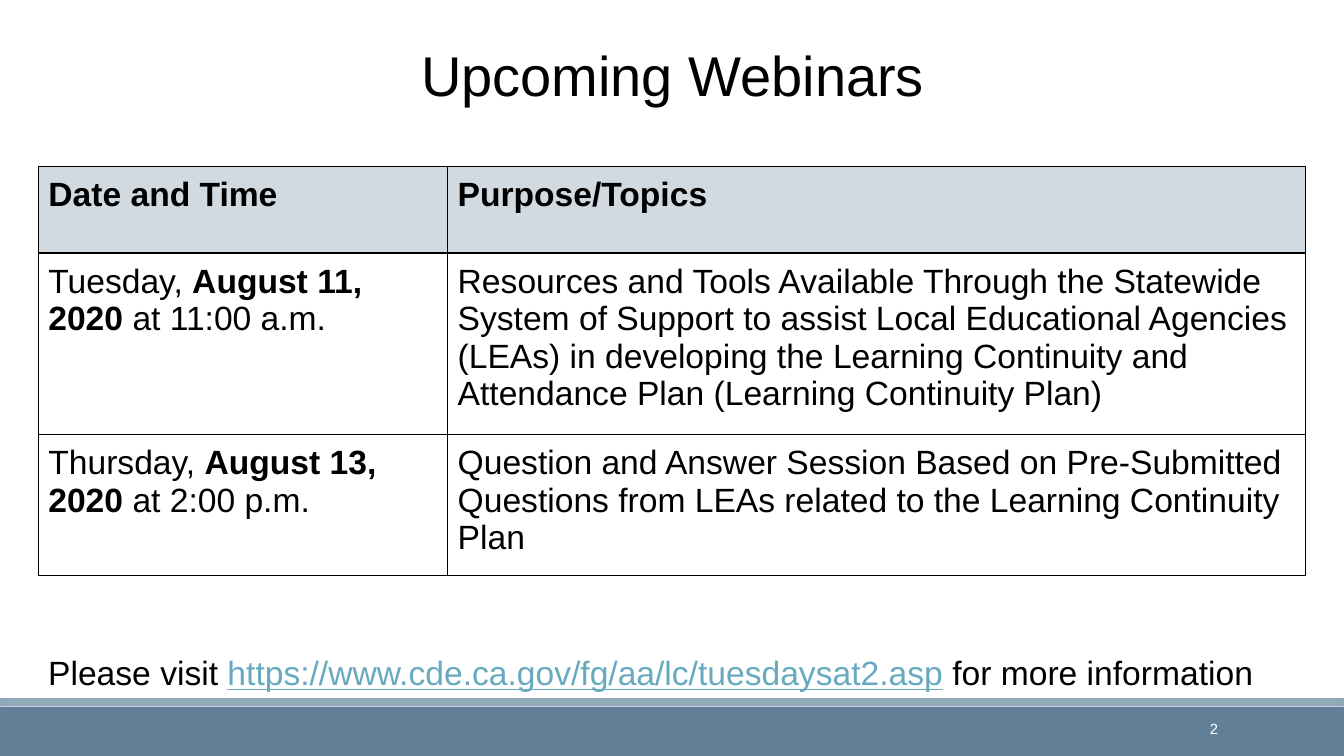
from dataclasses import dataclass

from lxml.etree import SubElement
from pptx import Presentation
from pptx.dml.color import RGBColor
from pptx.enum.shapes import MSO_SHAPE as Shape
from pptx.enum.text import MSO_ANCHOR as Anchor, PP_ALIGN as Align
from pptx.oxml.ns import qn
from pptx.util import Inches, Pt


@dataclass(frozen=True)
class Theme:
    """Colours, font and type sizes."""
    font: str = "Arial"
    ink: str = "000000"
    paper: str = "FFFFFF"
    header: str = "D1D9E1"
    link: str = "67AABF"
    band: str = "618097"
    stripe: str = "92A9B9"
    stripe_line: str = "8FA2B6"
    title_size: float = 40
    body_size: float = 24
    number_size: float = 10.5


class SlideBuilder:
    """Draws styled elements on one slide."""

    def __init__(self, slide, theme):
        """Keep the slide and its theme."""
        self.slide = slide
        self.theme = theme

    def fill_text(self, frame, runs, size=None, color=None, align=Align.LEFT,
                  anchor=Anchor.TOP, spacing=None):
        """Fill a text frame with (text, overrides) runs."""
        frame.word_wrap = True
        frame.vertical_anchor = anchor
        paragraph = frame.paragraphs[0]
        paragraph.alignment = align
        if spacing:
            paragraph.line_spacing = spacing
        for text, overrides in runs:
            run = paragraph.add_run()
            run.text = text
            values = {"name": self.theme.font, "bold": False,
                      "size": Pt(size or self.theme.body_size)} | overrides
            run_color = values.pop("color", color or self.theme.ink)
            for name, value in values.items():
                setattr(run.font, name, value)
            run.font.color.rgb = RGBColor.from_string(run_color)

    def bar(self, top, height, fill, line=None):
        """Draw a full-width rectangle."""
        shape = self.slide.shapes.add_shape(
            Shape.RECTANGLE, 0, Inches(top), Inches(13.33), Inches(height))
        shape.shadow.inherit = False
        shape.fill.solid()
        shape.fill.fore_color.rgb = RGBColor.from_string(fill)
        if line:
            shape.line.color.rgb = RGBColor.from_string(line)
            shape.line.width = Pt(1.25)
        else:
            shape.line.fill.background()

    def text(self, box, runs, inset=0.05, **style):
        """Add a text box with the given vertical inset."""
        frame = self.slide.shapes.add_textbox(*map(Inches, box)).text_frame
        frame.margin_top = frame.margin_bottom = Inches(inset)
        self.fill_text(frame, runs, **style)

    def border(self, cell):
        """Outline a cell with thin lines, ahead of its fill."""
        properties = cell._tc.get_or_add_tcPr()
        for side in ("lnL", "lnR", "lnT", "lnB"):
            line = SubElement(properties, qn(f"a:{side}"), w=str(Pt(1)))
            fill = SubElement(line, qn("a:solidFill"))
            SubElement(fill, qn("a:srgbClr"), val=self.theme.ink)

    def table(self, left, top, widths, heights, rows):
        """Add a bordered table with a shaded first row."""
        table = self.slide.shapes.add_table(
            len(rows), len(widths), Inches(left), Inches(top),
            Inches(sum(widths)), Inches(sum(heights))).table
        table.horz_banding = False
        for column, width in zip(table.columns, widths):
            column.width = Inches(width)
        for index, (row, height) in enumerate(zip(rows, heights)):
            table.rows[index].height = Inches(height)
            for cell, runs in zip(table.rows[index].cells, row):
                for side in ("left", "right", "top", "bottom"):
                    setattr(cell, f"margin_{side}", Inches(0.1))
                self.border(cell)
                if index == 0:
                    cell.fill.solid()
                    cell.fill.fore_color.rgb = RGBColor.from_string(self.theme.header)
                else:
                    cell.fill.background()
                self.fill_text(cell.text_frame, runs)


def main():
    """Build the webinar slide."""
    presentation = Presentation()
    presentation.slide_width = Inches(13.33)
    presentation.slide_height = Inches(7.5)
    theme = Theme()
    builder = SlideBuilder(
        presentation.slides.add_slide(presentation.slide_layouts[6]), theme)
    bold = {"bold": True}

    builder.bar(7.01, 0.49, theme.band)
    builder.bar(6.93, 0.07, theme.stripe, theme.stripe_line)
    builder.text((1.17, 0.17, 11, 0.95), [("Upcoming Webinars", {})],
                 size=theme.title_size, align=Align.CENTER,
                 anchor=Anchor.BOTTOM, spacing=0.85)

    webinars = [
        ("Tuesday, ", "August 11, 2020 ", "at 11:00 a.m.",
         "Resources and Tools Available Through the Statewide System of Support "
         "to assist Local Educational Agencies (LEAs) in developing the Learning "
         "Continuity and Attendance Plan (Learning Continuity Plan)"),
        ("Thursday, ", "August 13, 2020 ", "at 2:00 p.m.",
         "Question and Answer Session Based on Pre-Submitted Questions from LEAs "
         "related to the Learning Continuity Plan"),
    ]
    rows = [[[("Date and Time", bold)], [("Purpose/Topics", bold)]]]
    rows += [[[(day, {}), (date, bold), (time, {})], [(topic, {})]]
             for day, date, time, topic in webinars]
    builder.table(0.38, 1.65, (4.06, 8.51), (0.86, 1.69, 1.32), rows)

    builder.text((0.38, 6.37, 12.57, 0.51), [
        ("Please visit ", {}),
        ("https://www.cde.ca.gov/fg/aa/lc/tuesdaysat2.asp",
         {"color": theme.link, "underline": True}),
        (" for more information", {}),
    ], inset=0.1)
    builder.text((10.75, 7.03, 1.43, 0.4), [("2", {})],
                 size=theme.number_size, color=theme.paper,
                 align=Align.RIGHT, anchor=Anchor.MIDDLE)
    presentation.save("out.pptx")


if __name__ == "__main__":
    main()
